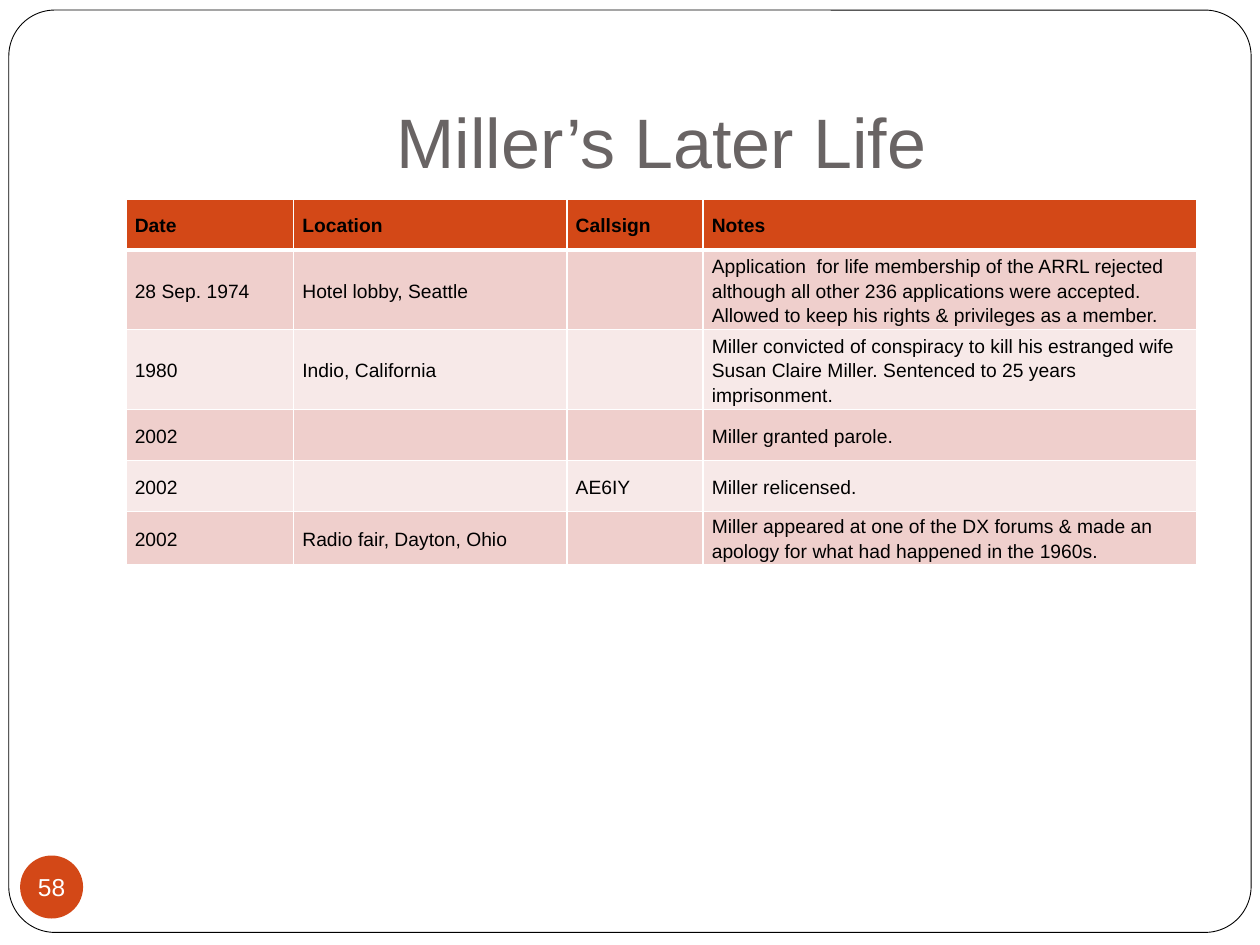
"""Build the slide on Miller's later life, with its dated table of events."""
from typing import NamedTuple

import pptx
import pptx.dml.color
import pptx.enum.shapes
import pptx.enum.text
import pptx.oxml
import pptx.oxml.ns
import pptx.util

Inches = pptx.util.Inches
Pt = pptx.util.Pt
SHAPE = pptx.enum.shapes.MSO_SHAPE
ANCHOR = pptx.enum.text.MSO_ANCHOR
ALIGN = pptx.enum.text.PP_ALIGN

FONT = "Arial"
ACCENT = "D34817"
BANDS = ("EFCFCC", "F7E9E8")
COL_WIDTHS = (1.33, 2.17, 1.08, 3.92)
ROW_HEIGHT = 0.405


class Event(NamedTuple):
    date: str
    location: str
    callsign: str
    notes: str


HEADER = Event("Date", "Location", "Callsign", "Notes")
EVENTS = [
    Event("28 Sep. 1974", "Hotel lobby, Seattle", "",
          "Application  for life membership of the ARRL rejected although all other "
          "236 applications were accepted. Allowed to keep his rights & privileges "
          "as a member."),
    Event("1980", "Indio, California", "",
          "Miller convicted of conspiracy to kill his estranged wife Susan Claire "
          "Miller. Sentenced to 25 years imprisonment."),
    Event("2002", "", "", "Miller granted parole."),
    Event("2002", "", "AE6IY", "Miller relicensed."),
    Event("2002", "Radio fair, Dayton, Ohio", "",
          "Miller appeared at one of the DX forums & made an apology for what had "
          "happened in the 1960s."),
]


def rgb(value: str) -> pptx.dml.color.RGBColor:
    return pptx.dml.color.RGBColor.from_string(value)


def set_text(tf, text: str, size: float, color: str, bold: bool = False):
    tf.text = text
    p = tf.paragraphs[0]
    for r in p.runs:
        r.font.name = FONT
        r.font.size = Pt(size)
        r.font.bold = bold
        r.font.color.rgb = rgb(color)
    return p


def set_margins(item, left: float, top: float, right: float, bottom: float) -> None:
    item.margin_left, item.margin_top = Inches(left), Inches(top)
    item.margin_right, item.margin_bottom = Inches(right), Inches(bottom)


def add_shape(s, kind, left: float, top: float, width: float, height: float, fill: str):
    sp = s.shapes.add_shape(kind, Inches(left), Inches(top), Inches(width), Inches(height))
    sp.shadow.inherit = False
    sp.fill.solid()
    sp.fill.fore_color.rgb = rgb(fill)
    sp.line.fill.background()
    return sp


def add_frame(s) -> None:
    sp = add_shape(s, SHAPE.ROUNDED_RECTANGLE, 0.07, 0.08, 9.86, 7.32, "FFFFFF")
    sp.adjustments[0] = 0.05
    sp.line.color.rgb = rgb("000000")
    sp.line.width = Pt(0.5)


def add_title(s, text: str) -> None:
    tf = s.shapes.add_textbox(Inches(1), Inches(0.3), Inches(8.5), Inches(1.25)).text_frame
    tf.word_wrap = True
    tf.vertical_anchor = ANCHOR.BOTTOM
    set_margins(tf, 0.1, 0.05, 0.1, 0.1)
    set_text(tf, text, 40, "696464").alignment = ALIGN.CENTER


def add_page_number(s, number: str) -> None:
    tf = add_shape(s, SHAPE.OVAL, 0.16, 6.79, 0.5, 0.5, ACCENT).text_frame
    tf.word_wrap = False
    tf.vertical_anchor = ANCHOR.MIDDLE
    set_margins(tf, 0, 0, 0, 0)
    set_text(tf, number, 14, "FFFFFF").alignment = ALIGN.CENTER


def set_borders(cell, widths: dict[str, float]) -> None:
    tc_pr = cell._tc.get_or_add_tcPr()
    for i, (side, width) in enumerate(widths.items()):
        tc_pr.insert(i, pptx.oxml.parse_xml(
            f'<a:{side} {pptx.oxml.ns.nsdecls("a")} w="{Pt(width)}"><a:solidFill>'
            f'<a:srgbClr val="FFFFFF"/></a:solidFill></a:{side}>'))


def fill_cell(cell, text: str, fill: str, bold: bool, top: float, bottom: float) -> None:
    cell.fill.solid()
    cell.fill.fore_color.rgb = rgb(fill)
    cell.vertical_anchor = ANCHOR.MIDDLE
    set_margins(cell, 0.07, 0, 0.07, 0)
    if text:
        set_text(cell.text_frame, text, 11, "000000", bold).line_spacing = 1.15
    set_borders(cell, {"lnL": 1, "lnR": 1, "lnT": top, "lnB": bottom})


def add_event_table(s, header: Event, events: list[Event]) -> None:
    rows = [header, *events]
    table = s.shapes.add_table(len(rows), len(COL_WIDTHS), Inches(1), Inches(1.58),
                               Inches(sum(COL_WIDTHS)),
                               Inches(ROW_HEIGHT * len(rows))).table
    for column, width in zip(table.columns, COL_WIDTHS):
        column.width = Inches(width)
    for i, event in enumerate(rows):
        table.rows[i].height = Inches(ROW_HEIGHT)
        fill = BANDS[(i - 1) % 2] if i else ACCENT
        for j, text in enumerate(event):
            fill_cell(table.cell(i, j), text, fill, i == 0,
                      top=3 if i == 1 else 1, bottom=1 if i else 3)


def main() -> None:
    prs = pptx.Presentation()
    prs.slide_width, prs.slide_height = Inches(10), Inches(7.5)
    s = prs.slides.add_slide(prs.slide_layouts[6])
    add_frame(s)
    add_title(s, "Miller’s Later Life")
    add_page_number(s, "58")
    add_event_table(s, HEADER, EVENTS)
    prs.save("out.pptx")


if __name__ == "__main__":
    main()
